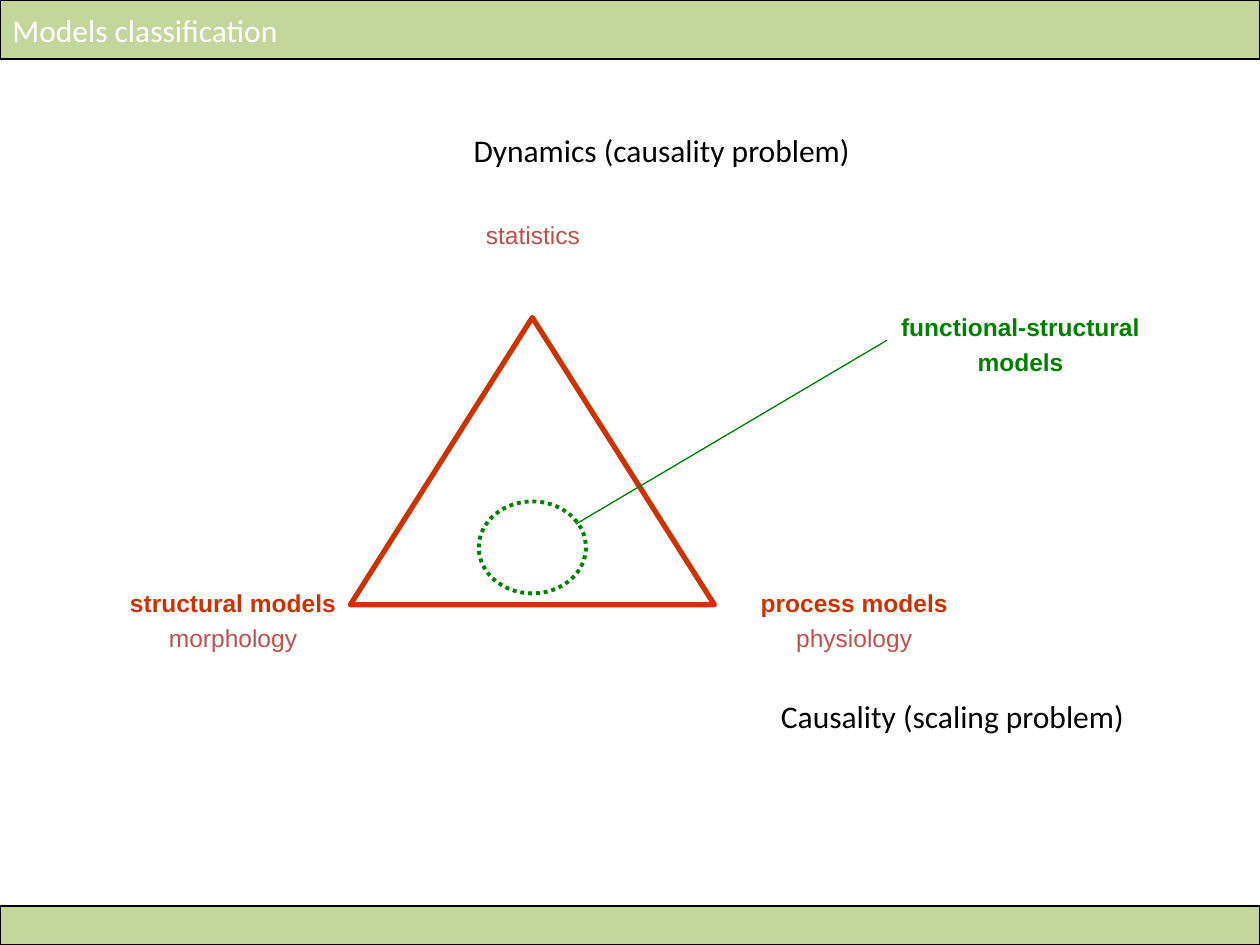
from pptx import Presentation
from pptx.dml.color import RGBColor
from pptx.enum.dml import MSO_LINE
from pptx.enum.shapes import MSO_CONNECTOR, MSO_SHAPE
from pptx.enum.text import MSO_ANCHOR, PP_ALIGN
from pptx.oxml.ns import qn
from pptx.util import Inches, Pt
from lxml import etree

RED, ROSE, GREEN = "CC3300", "C0504D", "008000"


def color(value):
    return RGBColor.from_string(value)


def style_text(paragraph, font_name, size, value, bold=False):
    for span in paragraph.runs:
        span.font.name = font_name
        span.font.size = Pt(size)
        span.font.color.rgb = color(value)
        span.font.bold = bold


deck = Presentation()
deck.slide_width, deck.slide_height = Inches(10), Inches(7.5)
page = deck.slides.add_slide(deck.slide_layouts[6])

# Header and footer bars
for top, height, title in [(0, 0.47, "Models classification"), (7.19, 0.31, "")]:
    bar = page.shapes.add_shape(
        MSO_SHAPE.RECTANGLE, 0, Inches(top), Inches(10), Inches(height))
    bar.shadow.inherit = False
    bar.fill.solid()
    bar.fill.fore_color.rgb = color("C3D69B")
    bar.line.color.rgb = color("000000")
    bar.line.width = Pt(1)
    if title:
        bar.text_frame.text = title
        bar.text_frame.vertical_anchor = MSO_ANCHOR.MIDDLE
        paragraph = bar.text_frame.paragraphs[0]
        paragraph.alignment = PP_ALIGN.LEFT
        style_text(paragraph, "Calibri", 18, "FFFFFF")

# Model triangle and the dotted region inside it
outlines = [
    (MSO_SHAPE.ISOSCELES_TRIANGLE, 2.78, 2.52, 2.89, 2.28, RED, 3, MSO_LINE.SOLID),
    (MSO_SHAPE.OVAL, 3.8, 3.98, 0.85, 0.73, GREEN, 2.25, MSO_LINE.ROUND_DOT),
]
for kind, left, top, width, height, value, weight, dash in outlines:
    outline = page.shapes.add_shape(
        kind, Inches(left), Inches(top), Inches(width), Inches(height))
    outline.shadow.inherit = False
    outline.fill.background()
    outline.line.color.rgb = color(value)
    outline.line.width = Pt(weight)
    outline.line.dash_style = dash

# Corner and callout labels: each line is text, colour, bold
labels = [
    (3.04, 1.7, 2.38, 0.39, [("statistics", ROSE, False)]),
    (0.83, 4.62, 2.04, 0.71,
     [("structural models", RED, True), ("morphology", ROSE, False)]),
    (5.76, 4.62, 2.04, 0.71,
     [("process models", RED, True), ("physiology", ROSE, False)]),
    (6.95, 2.43, 2.3, 0.71,
     [("functional-structural", GREEN, True), ("models", GREEN, True)]),
]
for left, top, width, height, lines in labels:
    box = page.shapes.add_textbox(
        Inches(left), Inches(top), Inches(width), Inches(height))
    box.text_frame.word_wrap = True
    box.text_frame.text = "\n".join(text for text, _, _ in lines)
    for index, paragraph in enumerate(box.text_frame.paragraphs):
        _, value, bold = lines[index]
        paragraph.alignment = PP_ALIGN.CENTER
        paragraph.space_before = Pt(3 if index else 0)
        style_text(paragraph, "Arial", 14, value, bold)

# Leader from the dotted region to its label
leader = page.shapes.add_connector(
    MSO_CONNECTOR.STRAIGHT, Inches(4.57), Inches(4.16), Inches(7.04), Inches(2.7))
leader.line.color.rgb = color(GREEN)
leader.line.width = Pt(0.75)
etree.SubElement(leader._element.spPr, qn("a:effectLst"))

# Problem captions
for left, top, width, text in [(3.66, 0.99, 3.22, "Dynamics (causality problem)"),
                               (6.1, 5.48, 2.96, "Causality (scaling problem)")]:
    box = page.shapes.add_textbox(
        Inches(left), Inches(top), Inches(width), Inches(0.4))
    box.text_frame.word_wrap = False
    box.text_frame.text = text
    style_text(box.text_frame.paragraphs[0], "Calibri", 18, "000000")

deck.save("out.pptx")
